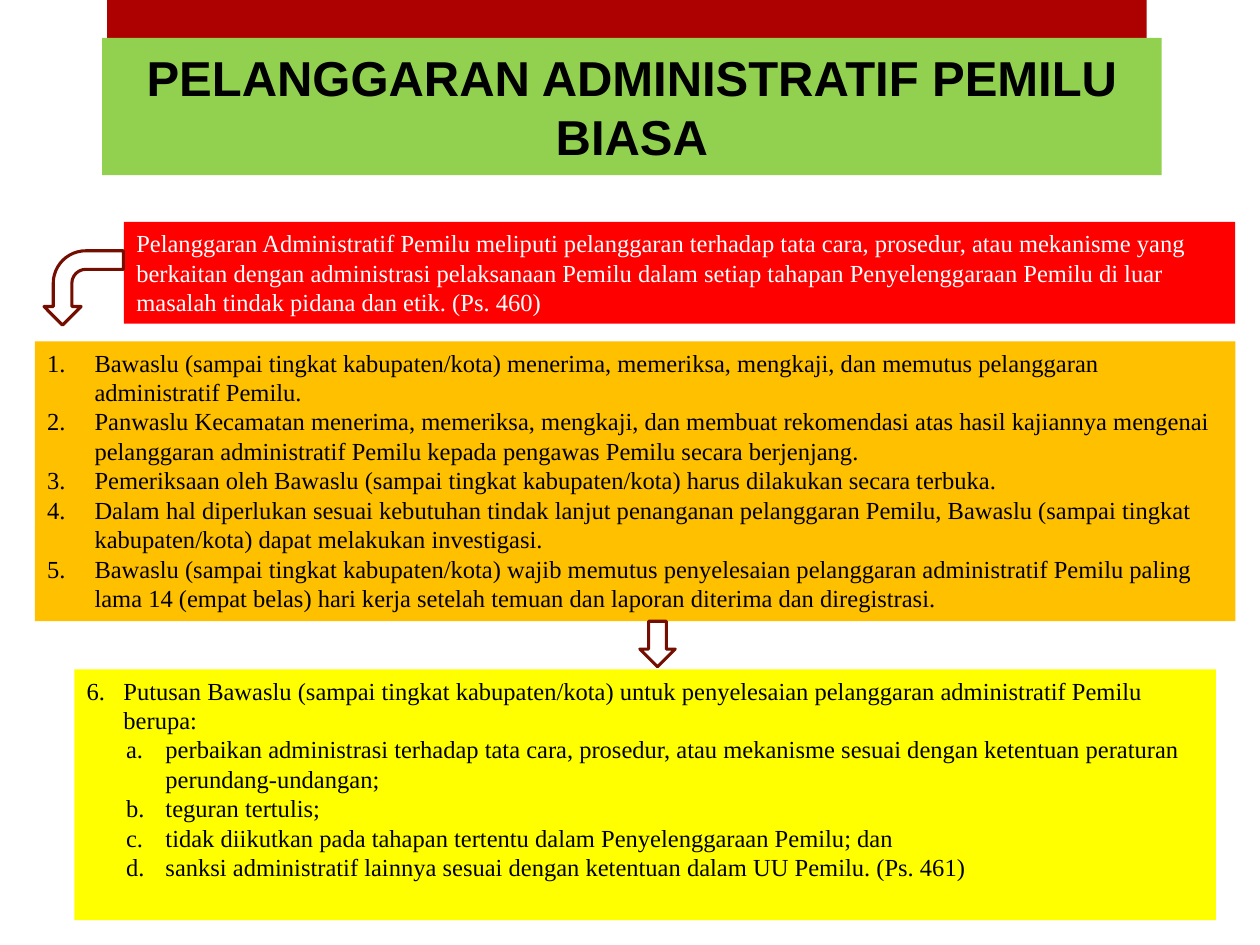
"""Build the slide on ordinary administrative election violations."""
from lxml.etree import SubElement
from pptx import Presentation
from pptx.dml.color import RGBColor
from pptx.enum.shapes import MSO_SHAPE
from pptx.enum.text import MSO_ANCHOR, MSO_AUTO_SIZE, PP_ALIGN
from pptx.oxml.ns import qn
from pptx.util import Pt

MAROON = RGBColor(0xAD, 0x01, 0x01)
BROWN = RGBColor(0x73, 0x0E, 0x00)
GREEN = RGBColor(0x92, 0xD0, 0x50)
RED = RGBColor(0xFF, 0x00, 0x00)
AMBER = RGBColor(0xFF, 0xC0, 0x00)
YELLOW = RGBColor(0xFF, 0xFF, 0x00)
WHITE = RGBColor(0xFF, 0xFF, 0xFF)
BLACK = RGBColor(0x00, 0x00, 0x00)

DEFINITION = (
    "Pelanggaran Administratif Pemilu meliputi pelanggaran terhadap tata cara, prosedur, atau "
    "mekanisme yang berkaitan dengan administrasi pelaksanaan Pemilu dalam setiap tahapan "
    "Penyelenggaraan Pemilu di luar masalah tindak pidana dan etik. (Ps. 460)"
)
PROCEDURE = [
    "Bawaslu (sampai tingkat kabupaten/kota) menerima, memeriksa, mengkaji, dan memutus "
    "pelanggaran administratif Pemilu.",
    "Panwaslu Kecamatan menerima, memeriksa, mengkaji, dan membuat rekomendasi atas hasil "
    "kajiannya mengenai pelanggaran administratif Pemilu kepada pengawas Pemilu secara berjenjang.",
    "Pemeriksaan oleh Bawaslu (sampai tingkat kabupaten/kota) harus dilakukan secara terbuka.",
    "Dalam hal diperlukan sesuai kebutuhan tindak lanjut penanganan pelanggaran Pemilu, Bawaslu "
    "(sampai tingkat kabupaten/kota) dapat melakukan investigasi.",
    "Bawaslu (sampai tingkat kabupaten/kota) wajib memutus penyelesaian pelanggaran administratif "
    "Pemilu paling lama 14 (empat belas) hari kerja setelah temuan dan laporan diterima dan "
    "diregistrasi.",
]
RULING = (
    "Putusan Bawaslu (sampai tingkat kabupaten/kota) untuk penyelesaian pelanggaran "
    "administratif Pemilu berupa:"
)
SANCTIONS = [
    "perbaikan administrasi terhadap tata cara, prosedur, atau mekanisme sesuai dengan ketentuan "
    "peraturan perundang-undangan;",
    "teguran tertulis;",
    "tidak diikutkan pada tahapan tertentu dalam Penyelenggaraan Pemilu; dan",
    "sanksi administratif lainnya sesuai dengan ketentuan dalam UU Pemilu. (Ps. 461)",
]


class Deck:
    """Hold the text style and the current slide."""

    font, size = "Times New Roman", 14
    title_font, title_size = "Arial", 28

    def __init__(self, prs):
        self.s = prs.slides.add_slide(prs.slide_layouts[5])

    def run(self, p, text, color, font, size, bold=False):
        p.line_spacing = Pt(1.2 * size)
        p.space_before = p.space_after = Pt(0)
        r = p.add_run()
        r.text = text
        r.font.name, r.font.size, r.font.bold = font, Pt(size), bold
        r.font.color.rgb = color

    def title(self, text, x, y, w, h, fill):
        sp = self.s.shapes.title
        sp.left, sp.top, sp.width, sp.height = Pt(x), Pt(y), Pt(w), Pt(h)
        sp.fill.solid()
        sp.fill.fore_color.rgb = fill
        tf = sp.text_frame
        tf.word_wrap, tf.auto_size = True, MSO_AUTO_SIZE.NONE
        tf.vertical_anchor = MSO_ANCHOR.MIDDLE
        p = tf.paragraphs[0]
        p.alignment = PP_ALIGN.CENTER
        self.run(p, text, BLACK, self.title_font, self.title_size, True)

    def shape(self, kind, x, y, w, h, fill, line=None):
        sp = self.s.shapes.add_shape(kind, Pt(x), Pt(y), Pt(w), Pt(h))
        sp.shadow.inherit = False
        sp.fill.solid()
        sp.fill.fore_color.rgb = fill
        if line is None:
            sp.line.fill.background()
        else:
            sp.line.color.rgb, sp.line.width = line, Pt(1.75)
        return sp

    def bar(self, x, y, w, h, fill):
        sp = self.shape(MSO_SHAPE.RECTANGLE, x, y, w, h, fill)
        self.s.shapes.title.element.addprevious(sp.element)

    def arrow(self, kind, x, y, w, h, rotation=0, flip=False):
        sp = self.shape(kind, x, y, w, h, WHITE, BROWN)
        sp.rotation = rotation
        if flip:
            sp.element.spPr.xfrm.set("flipV", "1")

    def panel(self, x, y, w, h, fill):
        tf = self.shape(MSO_SHAPE.RECTANGLE, x, y, w, h, fill).text_frame
        tf.word_wrap, tf.vertical_anchor = True, MSO_ANCHOR.TOP
        return tf

    def paragraph(self, tf, text, color=BLACK):
        p = tf.paragraphs[0] if not tf.text else tf.add_paragraph()
        p.alignment = PP_ALIGN.LEFT
        self.run(p, text, color, self.font, self.size)
        return p

    def numbered(self, tf, items, margin, hang, scheme="arabicPeriod", start=1):
        for text in items:
            pPr = self.paragraph(tf, text)._p.get_or_add_pPr()
            pPr.set("marL", str(Pt(margin)))
            pPr.set("indent", str(-Pt(hang)))
            num = SubElement(pPr, qn("a:buAutoNum"), type=scheme)
            if start > 1:
                num.set("startAt", str(start))


def main():
    prs = Presentation()
    prs.slide_width, prs.slide_height = Pt(720), Pt(540)
    deck = Deck(prs)
    deck.title("PELANGGARAN ADMINISTRATIF PEMILU BIASA", 58.3, 21.6, 605.5, 78.5, GREEN)
    deck.bar(61.2, 0, 594, 30.2, MAROON)

    tf = deck.panel(70.8, 126.8, 635, 58.2, RED)
    deck.paragraph(tf, DEFINITION, WHITE)

    tf = deck.panel(19.9, 195.1, 686, 159.8, AMBER)
    deck.numbered(tf, PROCEDURE, 27, 27)
    deck.arrow(MSO_SHAPE.BENT_ARROW, 26.6, 141.8, 42.5, 45.4, 90, True)

    tf = deck.panel(42.5, 382.5, 652.3, 143.3, YELLOW)
    deck.numbered(tf, [RULING], 21, 21, start=6)
    deck.numbered(tf, SANCTIONS, 45, 22.5, "alphaLcPeriod")
    deck.arrow(MSO_SHAPE.DOWN_ARROW, 365.6, 355, 20.2, 26)
    prs.save("out.pptx")


if __name__ == "__main__":
    main()
